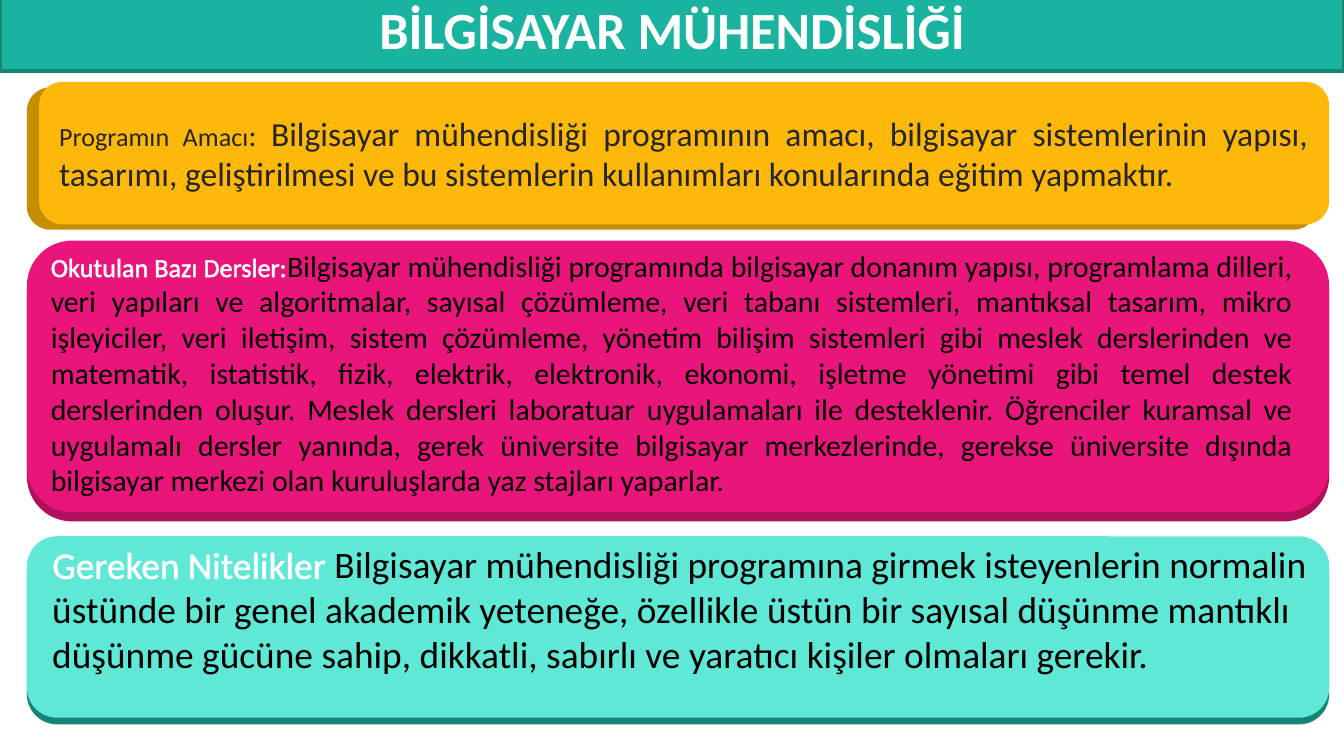
from lxml import etree
from pptx import Presentation
from pptx.dml.color import RGBColor
from pptx.enum.shapes import MSO_SHAPE
from pptx.enum.text import MSO_ANCHOR, PP_ALIGN
from pptx.oxml.ns import qn
from pptx.util import Inches, Pt

ROUND_RECT = MSO_SHAPE.ROUNDED_RECTANGLE
MIDDLE, TOP = MSO_ANCHOR.MIDDLE, MSO_ANCHOR.TOP
LEFT, CENTER, JUSTIFY = PP_ALIGN.LEFT, PP_ALIGN.CENTER, PP_ALIGN.JUSTIFY

FONT = "Calibri"
COLORS = {
    "white": "FFFFFF",
    "black": "000000",
    "ink": "262626",
    "teal": "1AB39F",
    "teal_line": "138476",
    "amber": "FEB80A",
    "amber_dark": "C58D01",
    "pink": "EA157A",
    "pink_dark": "B0105C",
    "mint": "5FE8D6",
    "mint_dark": "138677",
}

PURPOSE = (
    "Bilgisayar mühendisliği programının amacı, bilgisayar sistemlerinin yapısı, "
    "tasarımı, geliştirilmesi ve bu sistemlerin kullanımları konularında eğitim "
    "yapmaktır."
)
COURSES = (
    "Bilgisayar mühendisliği programında bilgisayar donanım yapısı, programlama "
    "dilleri, veri yapıları ve algoritmalar, sayısal çözümleme, veri tabanı "
    "sistemleri, mantıksal tasarım, mikro işleyiciler, veri iletişim, sistem "
    "çözümleme, yönetim bilişim sistemleri gibi meslek derslerinden ve matematik, "
    "istatistik, fizik, elektrik, elektronik, ekonomi, işletme yönetimi gibi temel "
    "destek derslerinden oluşur. Meslek dersleri laboratuar uygulamaları ile "
    "desteklenir. Öğrenciler kuramsal ve uygulamalı dersler yanında, gerek "
    "üniversite bilgisayar merkezlerinde, gerekse üniversite dışında bilgisayar "
    "merkezi olan kuruluşlarda yaz stajları yaparlar."
)
QUALITIES = (
    " Bilgisayar mühendisliği programına girmek isteyenlerin normalin üstünde bir "
    "genel akademik yeteneğe, özellikle üstün bir sayısal düşünme mantıklı düşünme "
    "gücüne sahip, dikkatli, sabırlı ve yaratıcı kişiler olmaları gerekir."
)


def rgb(name):
    return RGBColor.from_string(COLORS[name])


def outline(r):
    """Give a run a thin white outline."""
    ln = etree.Element(qn("a:ln"), w=str(Pt(1.45)))
    fill = etree.SubElement(ln, qn("a:solidFill"))
    etree.SubElement(fill, qn("a:srgbClr"), val=COLORS["white"])
    r.font._element.insert(0, ln)


def write(tf, runs, align, anchor, bold=False, outlined=0):
    """Write (text, size, color) runs, outlining the first few of them."""
    tf.word_wrap = True
    tf.vertical_anchor = anchor
    p = tf.paragraphs[0]
    p.alignment = align
    for i, (text, size, color) in enumerate(runs):
        r = p.add_run()
        r.text = text
        r.font.name = FONT
        r.font.size = Pt(size)
        r.font.bold = bold
        r.font.color.rgb = rgb(color)
        if i < outlined:
            outline(r)


def place(sp, left, top, width, height):
    sp.left, sp.top = Inches(left), Inches(top)
    sp.width, sp.height = Inches(width), Inches(height)


def add_title(s, text):
    sp = s.shapes.title
    place(sp, 0, -0.1, 10, 0.63)
    sp.fill.solid()
    sp.fill.fore_color.rgb = rgb("teal")
    sp.line.color.rgb = rgb("teal_line")
    sp.line.width = Pt(2)
    tf = sp.text_frame
    tf.margin_left = tf.margin_right = Inches(0.08)
    tf.margin_top = tf.margin_bottom = Inches(0.04)
    write(tf, [(text, 28, "white")], CENTER, MIDDLE, bold=True)


def add_panel(group, box, color):
    sp = group.shapes.add_shape(ROUND_RECT, *map(Inches, box))
    sp.shadow.inherit = False
    sp.fill.solid()
    sp.fill.fore_color.rgb = rgb(color)
    sp.line.fill.background()
    return sp


def add_card(s, back, front, color):
    """Add a grouped panel over its darker backing; return group and panel."""
    group = s.shapes.add_group_shape()
    add_panel(group, back, color + "_dark")
    return group, add_panel(group, front, color)


def add_text(group, box, runs, align):
    tb = group.shapes.add_textbox(*map(Inches, box))
    write(tb.text_frame, runs, align, TOP, outlined=1)


def main():
    # Widescreen 16:9
    prs = Presentation()
    prs.slide_width = Inches(10)
    prs.slide_height = prs.slide_width * 9 // 16
    s = prs.slides.add_slide(prs.slide_layouts[5])
    add_title(s, "BİLGİSAYAR MÜHENDİSLİĞİ")

    # Purpose of the programme
    _, panel = add_card(s, (0.2, 0.65, 9.6, 1.06), (0.29, 0.61, 9.6, 1.06), "amber")
    write(panel.text_frame,
          [("Programın Amacı", 14, "ink"), (": ", 16, "ink"), (PURPOSE, 18, "ink")],
          JUSTIFY, MIDDLE, outlined=2)

    # Courses taught
    group, _ = add_card(s, (0.2, 1.86, 9.69, 2.02), (0.2, 1.79, 9.69, 2.02), "pink")
    add_text(group, (0.28, 1.79, 9.44, 2.25),
             [("Okutulan Bazı Dersler:", 14, "white"), (COURSES, 16, "black")],
             JUSTIFY)

    # Required qualities
    group, _ = add_card(s, (0.2, 4.04, 9.69, 1.35), (0.2, 3.99, 9.69, 1.35), "mint")
    add_text(group, (0.29, 3.98, 9.61, 1.72),
             [("Gereken Nitelikler", 20, "white"), (QUALITIES, 20, "black")],
             LEFT)

    prs.save("out.pptx")


if __name__ == "__main__":
    main()
